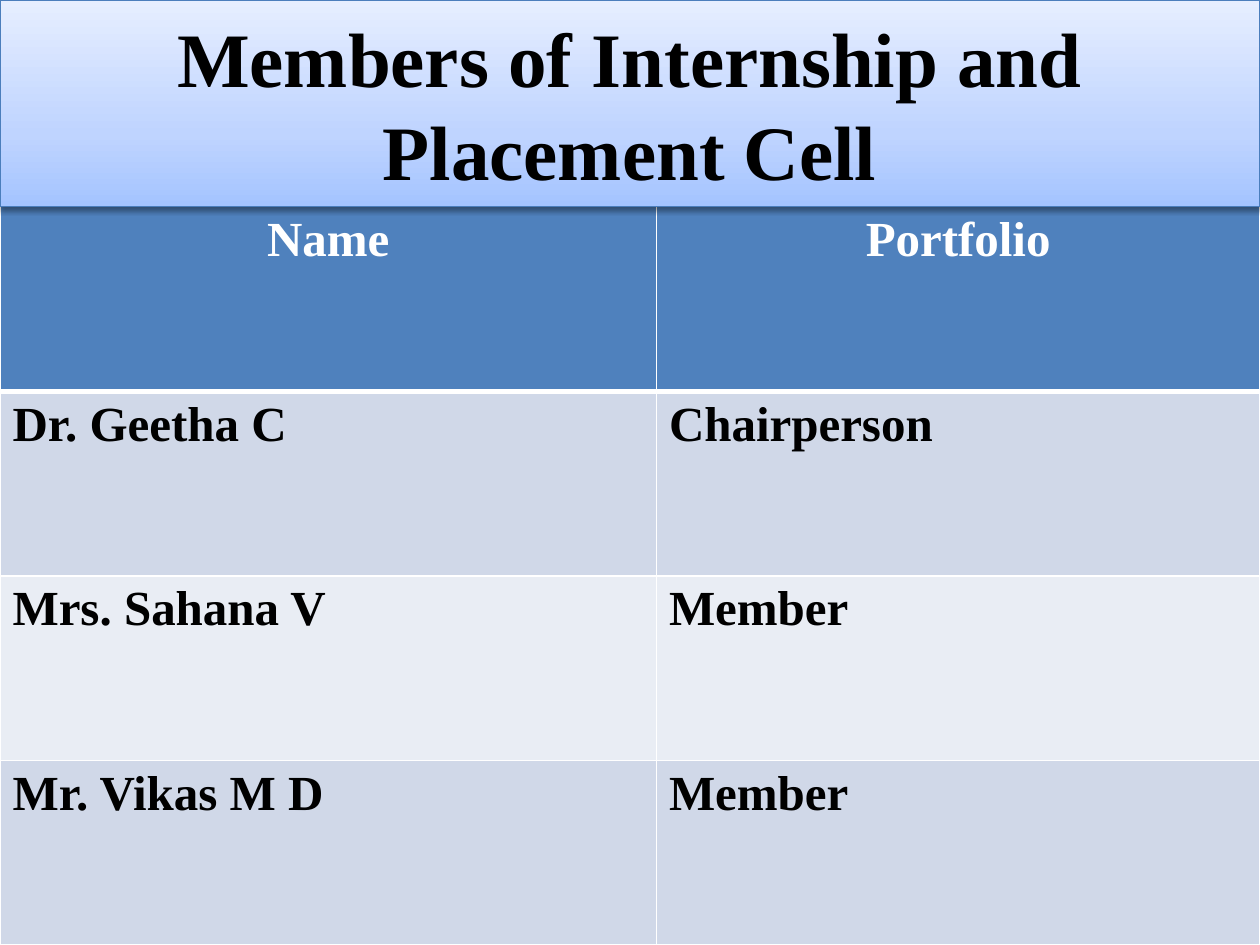
import pptx
import pptx.util
import pptx.oxml
import pptx.oxml.ns
from pptx.util import Inches
from pptx.dml.color import RGBColor
from pptx.enum.text import MSO_ANCHOR, MSO_AUTO_SIZE, PP_ALIGN

BLACK = RGBColor(0x00, 0x00, 0x00)
WHITE = RGBColor(0xFF, 0xFF, 0xFF)
HEADER_BLUE = RGBColor(0x4F, 0x81, 0xBD)
BAND_DARK = RGBColor(0xD0, 0xD8, 0xE8)
BAND_LIGHT = RGBColor(0xE9, 0xED, 0xF4)
TITLE_LINE = RGBColor(0x4B, 0x7E, 0xBC)
# Position in percent, from the bottom of the title to its top
TITLE_STOPS = [
    (0, RGBColor(0xA4, 0xC4, 0xFF)),
    (35, RGBColor(0xBF, 0xD4, 0xFF)),
    (100, RGBColor(0xE6, 0xEE, 0xFF)),
]
TITLE_HEIGHT = 1.64
MEMBERS = [
    ("Name", "Portfolio"),
    ("Dr. Geetha C", "Chairperson"),
    ("Mrs. Sahana V", "Member"),
    ("Mr. Vikas M D", "Member"),
]
NAMESPACE = pptx.oxml.ns.nsdecls("a")


def write(frame, text, align, size, color):
    para = frame.paragraphs[0]
    para.alignment = align
    span = para.add_run()
    span.text = text
    span.font.color.rgb = color
    formats = {"name": "Times New Roman", "size": pptx.util.Pt(size), "bold": True}
    for name, value in formats.items():
        setattr(span.font, name, value)


def add_border(cell, side, points):
    cell._tc.get_or_add_tcPr().append(pptx.oxml.parse_xml(
        f'<a:ln{side} {NAMESPACE} w="{pptx.util.Pt(points)}"><a:solidFill>'
        f'<a:srgbClr val="{WHITE}"/></a:solidFill></a:ln{side}>'))


deck = pptx.Presentation()
deck.slide_width = Inches(10)
deck.slide_height = Inches(7.5)
page = deck.slides.add_slide(deck.slide_layouts[5])

# Table of members
row_height = (7.5 - TITLE_HEIGHT) / len(MEMBERS)
table = page.shapes.add_table(
    len(MEMBERS), 2, 0, Inches(TITLE_HEIGHT), Inches(10), Inches(7.5 - TITLE_HEIGHT)).table
for column, width in zip(table.columns, (5.21, 4.79)):
    column.width = Inches(width)

for row, texts in enumerate(MEMBERS):
    table.rows[row].height = Inches(row_height)
    if row == 0:
        align, color, fill = PP_ALIGN.CENTER, WHITE, HEADER_BLUE
    else:
        align, color = PP_ALIGN.LEFT, BLACK
        fill = BAND_DARK if row % 2 else BAND_LIGHT
    for column, text in enumerate(texts):
        cell = table.cell(row, column)
        write(cell.text_frame, text, align, 28, color)
        # The rule under the header is thicker
        for side in "LRTB":
            thick = (row, side) in ((0, "B"), (1, "T"))
            add_border(cell, side, 3 if thick else 1)
        cell.fill.solid()
        cell.fill.fore_color.rgb = fill

# Title band, in front of the table
title = page.shapes.title
page.shapes._spTree.append(title._element)
placement = {"left": 0, "top": 0, "width": Inches(10), "height": Inches(TITLE_HEIGHT)}
for name, value in placement.items():
    setattr(title, name, value)
frame = title.text_frame
frame_formats = {"word_wrap": True, "auto_size": MSO_AUTO_SIZE.NONE,
                 "vertical_anchor": MSO_ANCHOR.MIDDLE}
for name, value in frame_formats.items():
    setattr(frame, name, value)
write(frame, "Members of Internship and Placement Cell", PP_ALIGN.CENTER, 44, BLACK)

# Title gradient, outline and shadow
stops = "".join(
    f'<a:gs pos="{percent * 1000}"><a:srgbClr val="{color}"/></a:gs>'
    for percent, color in TITLE_STOPS)
properties = title._element.spPr
properties.append(pptx.oxml.parse_xml(
    f'<a:gradFill {NAMESPACE} rotWithShape="1"><a:gsLst>{stops}</a:gsLst>'
    '<a:lin ang="16200000" scaled="0"/></a:gradFill>'))
title.line.color.rgb = TITLE_LINE
title.line.width = pptx.util.Pt(0.75)
properties.append(pptx.oxml.parse_xml(
    f'<a:effectLst {NAMESPACE}><a:outerShdw blurRad="{pptx.util.Pt(3.1)}" '
    f'dist="{pptx.util.Pt(1.6)}" dir="5400000" rotWithShape="0">'
    f'<a:srgbClr val="{BLACK}"><a:alpha val="38000"/></a:srgbClr>'
    '</a:outerShdw></a:effectLst>'))

deck.save("out.pptx")
